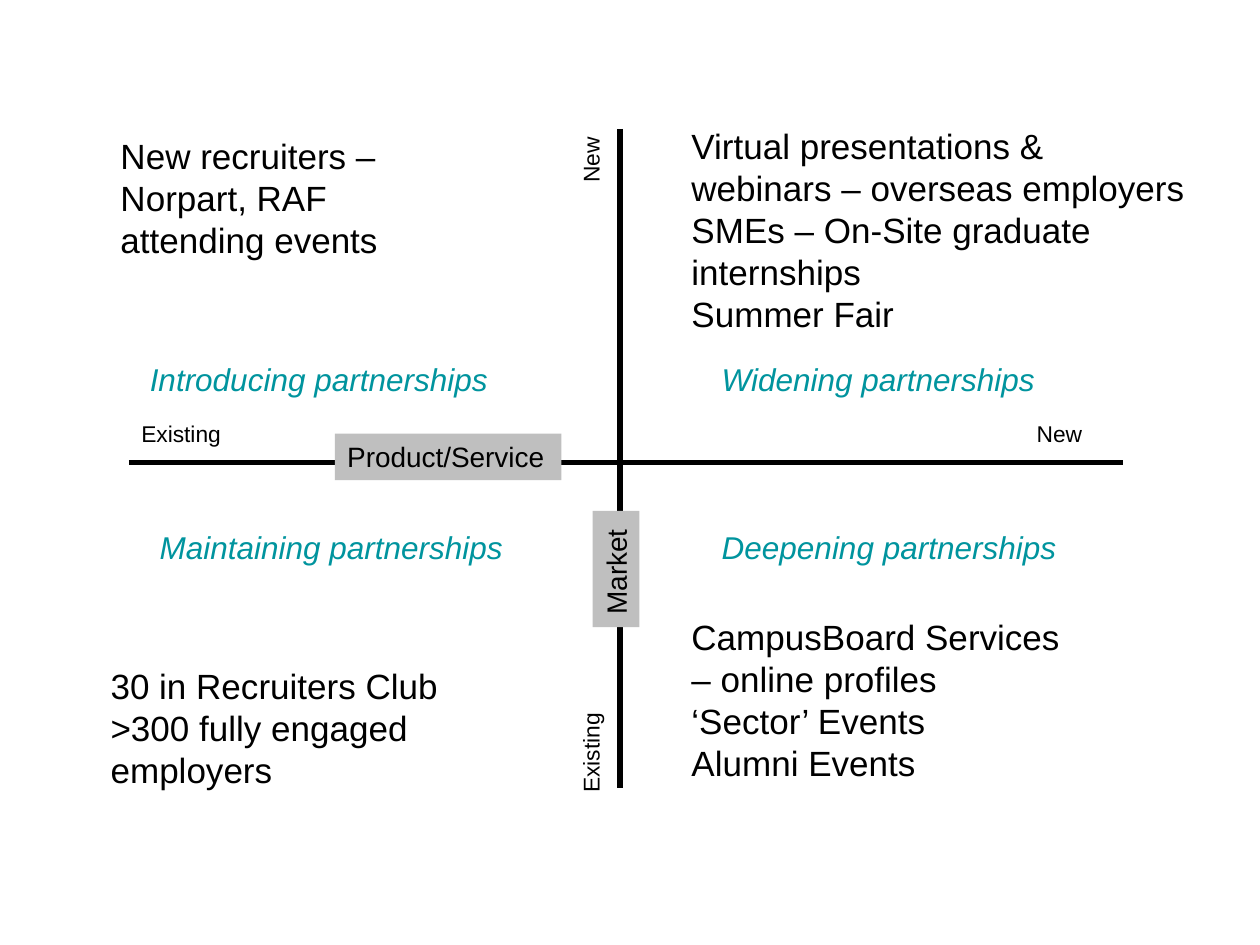
"""Build a market and product/service partnership matrix slide."""
import pptx
import pptx.dml.color
import pptx.enum.shapes
import pptx.enum.text
import pptx.oxml
import pptx.oxml.ns
import pptx.util

Cm = pptx.util.Cm
BLACK = pptx.dml.color.RGBColor(0x00, 0x00, 0x00)
WHITE = pptx.dml.color.RGBColor(0xFF, 0xFF, 0xFF)
GREY = pptx.dml.color.RGBColor(0xBF, 0xBF, 0xBF)
TEAL = pptx.dml.color.RGBColor(0x00, 0x94, 0x9E)


def write(box, lines, size, color=BLACK, italic=False):
    frame = box.text_frame
    frame.word_wrap = True
    frame.auto_size = pptx.enum.text.MSO_AUTO_SIZE.SHAPE_TO_FIT_TEXT
    frame.vertical_anchor = pptx.enum.text.MSO_ANCHOR.TOP
    for index, line in enumerate(lines):
        para = frame.paragraphs[0] if index == 0 else frame.add_paragraph()
        para.alignment = pptx.enum.text.PP_ALIGN.LEFT
        span = para.add_run()
        span.text = line
        span.font.name = "Arial"
        span.font.size = pptx.util.Pt(size)
        span.font.italic = italic
        span.font.color.rgb = color


deck = pptx.Presentation()
deck.slide_width = Cm(25.4)
deck.slide_height = Cm(19.05)
page = deck.slides.add_slide(deck.slide_layouts[6])

axes = [(12.5, 2.6, 12.5, 15.88), (2.6, 9.32, 22.63, 9.32)]
for ends in axes:
    axis = page.shapes.add_connector(
        pptx.enum.shapes.MSO_CONNECTOR.STRAIGHT, *[Cm(end) for end in ends])
    axis.line.color.rgb = BLACK
    axis.line.width = pptx.util.Pt(3)
    properties = axis.element.find(pptx.oxml.ns.qn("p:spPr"))
    properties.append(pptx.oxml.parse_xml(
        "<a:effectLst %s/>" % pptx.oxml.ns.nsdecls("a")))

examples = [
    (1.98, 13.28, 7.54, 2.82,
     ["30 in Recruiters Club", ">300 fully engaged employers"]),
    (13.69, 12.29, 8.13, 3.68,
     ["CampusBoard Services – online profiles", "‘Sector’ Events", "Alumni Events"]),
    (13.69, 2.39, 10.52, 4.52,
     ["Virtual presentations & webinars – overseas employers",
      "SMEs – On-Site graduate internships", "Summer Fair"]),
    (2.18, 2.59, 7.54, 2.82,
     ["New recruiters – Norpart, RAF attending events"]),
]
for left, top, width, height, lines in examples:
    box = page.shapes.add_textbox(Cm(left), Cm(top), Cm(width), Cm(height))
    write(box, lines, 20)

labels = [
    ("Product/Service", 6.75, 8.74, 4.57, 0.94, 0, GREY, 16),
    ("Market", 11.25, 11.0, 2.34, 0.94, 270, GREY, 16),
    ("Existing", 2.6, 8.33, 2.74, 0.81, 0, WHITE, 13),
    ("New", 20.65, 8.33, 2.74, 0.81, 0, WHITE, 13),
    ("New", 10.54, 2.16, 2.74, 0.81, 270, WHITE, 13),
    ("Existing", 10.54, 14.45, 2.74, 0.81, 270, WHITE, 13),
]
for text, left, top, width, height, rotation, fill, size in labels:
    label = page.shapes.add_shape(
        pptx.enum.shapes.MSO_SHAPE.RECTANGLE,
        Cm(left), Cm(top), Cm(width), Cm(height))
    label.rotation = rotation
    label.shadow.inherit = False
    label.fill.solid()
    label.fill.fore_color.rgb = fill
    label.line.fill.background()
    write(label, [text], size)

strategies = [
    ("Maintaining", 2.97, 10.52),
    ("Deepening", 14.3, 10.52),
    ("Widening", 14.3, 7.14),
    ("Introducing", 2.77, 7.14),
]
for strategy, left, top in strategies:
    box = page.shapes.add_textbox(Cm(left), Cm(top), Cm(7.75), Cm(1.02))
    write(box, [strategy + " partnerships"], 18, TEAL, True)

deck.save("out.pptx")
